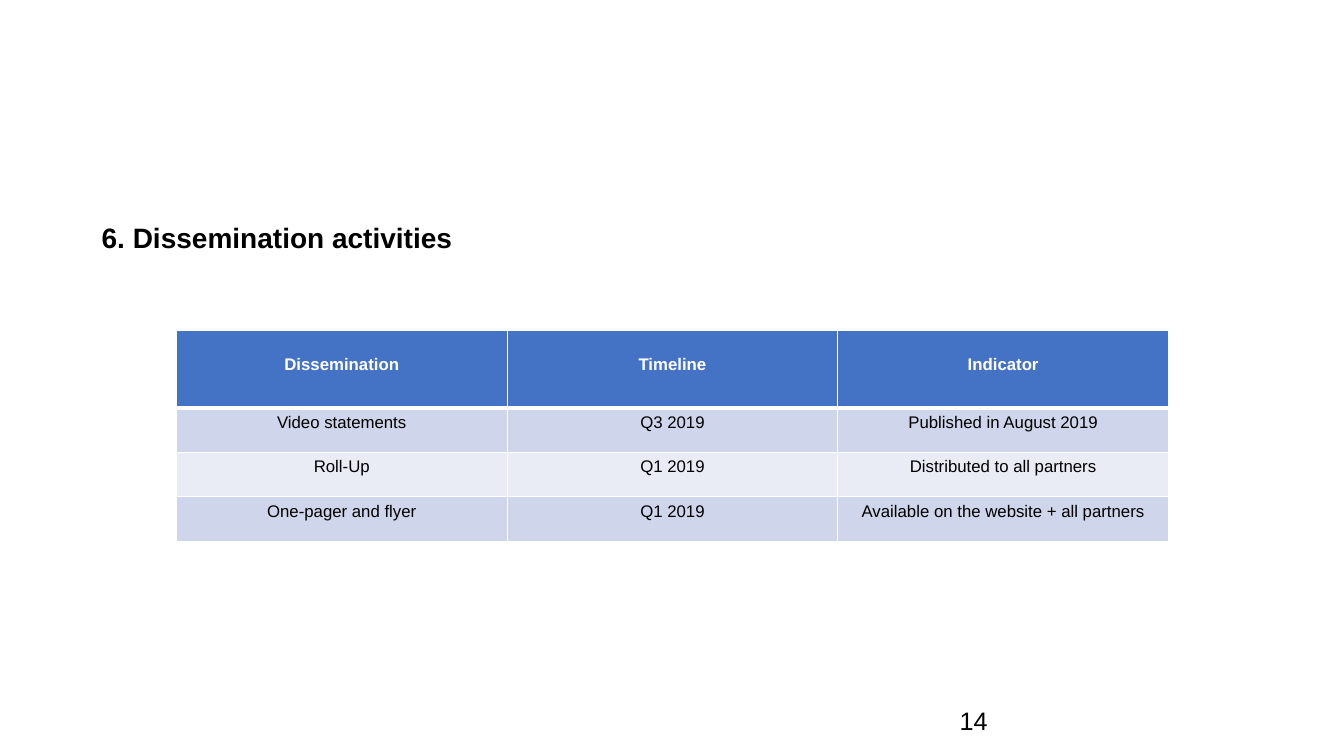
from lxml.etree import SubElement
from pptx import Presentation
from pptx.dml.color import RGBColor
from pptx.enum.text import MSO_ANCHOR, PP_ALIGN
from pptx.oxml.ns import qn
from pptx.util import Inches, Pt

FONT = "Arial"
BLACK, WHITE = "000000", "FFFFFF"
HEADER_FILL = "4472C4"
BAND_FILLS = ["CFD5EA", "E9EBF5"]

ACTIVITIES = [
    ["Dissemination", "Timeline", "Indicator"],
    ["Video statements", "Q3 2019", "Published in August 2019"],
    ["Roll-Up", "Q1 2019", "Distributed to all partners"],
    ["One-pager and flyer", "Q1 2019", "Available on the website + all partners"],
]


def color(value):
    return RGBColor.from_string(value)


def set_font(paragraph, size, value, bold=False):
    font = paragraph.font
    font.name, font.size, font.bold = FONT, Pt(size), bold
    font.color.rgb = color(value)


def add_text(page, text, left, top, width, height, size, bold=False, anchor=MSO_ANCHOR.TOP):
    box = page.shapes.add_textbox(Inches(left), Inches(top), Inches(width), Inches(height))
    frame = box.text_frame
    frame.word_wrap = True
    frame.vertical_anchor = anchor
    paragraph = frame.paragraphs[0]
    paragraph.text = text
    set_font(paragraph, size, BLACK, bold)
    return paragraph


def set_borders(cell, top, bottom):
    properties = cell._tc.get_or_add_tcPr()
    for side, width in (("L", 1), ("R", 1), ("T", top), ("B", bottom)):
        line = SubElement(properties, qn(f"a:ln{side}"), w=str(Pt(width)))
        fill = SubElement(line, qn("a:solidFill"))
        SubElement(fill, qn("a:srgbClr"), val=WHITE)


def fill_cell(cell, text, row):
    header = row == 0
    # The header has a thick rule beneath it
    set_borders(cell, top=3 if row == 1 else 1, bottom=3 if header else 1)
    cell.fill.solid()
    cell.fill.fore_color.rgb = color(HEADER_FILL if header else BAND_FILLS[(row - 1) % 2])
    if header:
        cell.margin_top = Inches(0.24)
    paragraph = cell.text_frame.paragraphs[0]
    paragraph.text = text
    paragraph.alignment = PP_ALIGN.CENTER
    set_font(paragraph, 12, WHITE if header else BLACK, header)


def add_activity_table(page, rows, left, top, column_width, header_height, row_height):
    columns = len(rows[0])
    height = header_height + row_height * (len(rows) - 1)
    table = page.shapes.add_table(
        len(rows), columns, Inches(left), Inches(top),
        Inches(column_width * columns), Inches(height),
    ).table
    for column in table.columns:
        column.width = Inches(column_width)
    for index, values in enumerate(rows):
        table.rows[index].height = Inches(row_height if index else header_height)
        for position, text in enumerate(values):
            fill_cell(table.cell(index, position), text, index)


def main():
    deck = Presentation()
    deck.slide_width, deck.slide_height = Inches(13.33), Inches(7.5)
    page = deck.slides.add_slide(deck.slide_layouts[6])

    # Page number
    add_text(page, "14", 9.42, 6.95, 3, 0.4, 18, anchor=MSO_ANCHOR.MIDDLE)

    # Heading
    heading = add_text(page, "6. Dissemination activities", 0.91, 2.18, 10.26, 0.43, 20, bold=True)
    heading.line_spacing = 0.9

    # Activities
    add_activity_table(page, ACTIVITIES, 1.75, 3.28, 3.28, 0.77, 0.44)

    deck.save("out.pptx")


if __name__ == "__main__":
    main()
